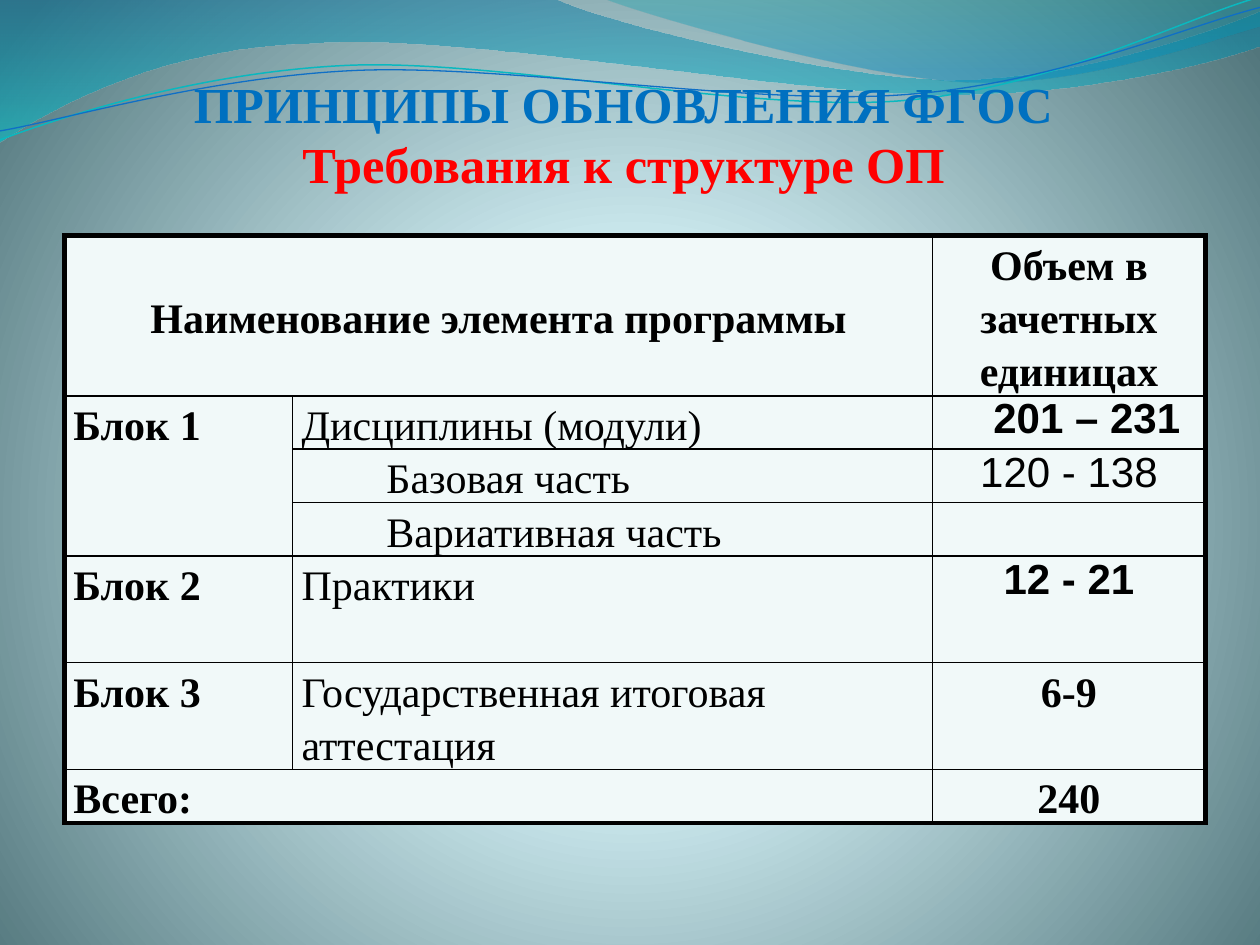
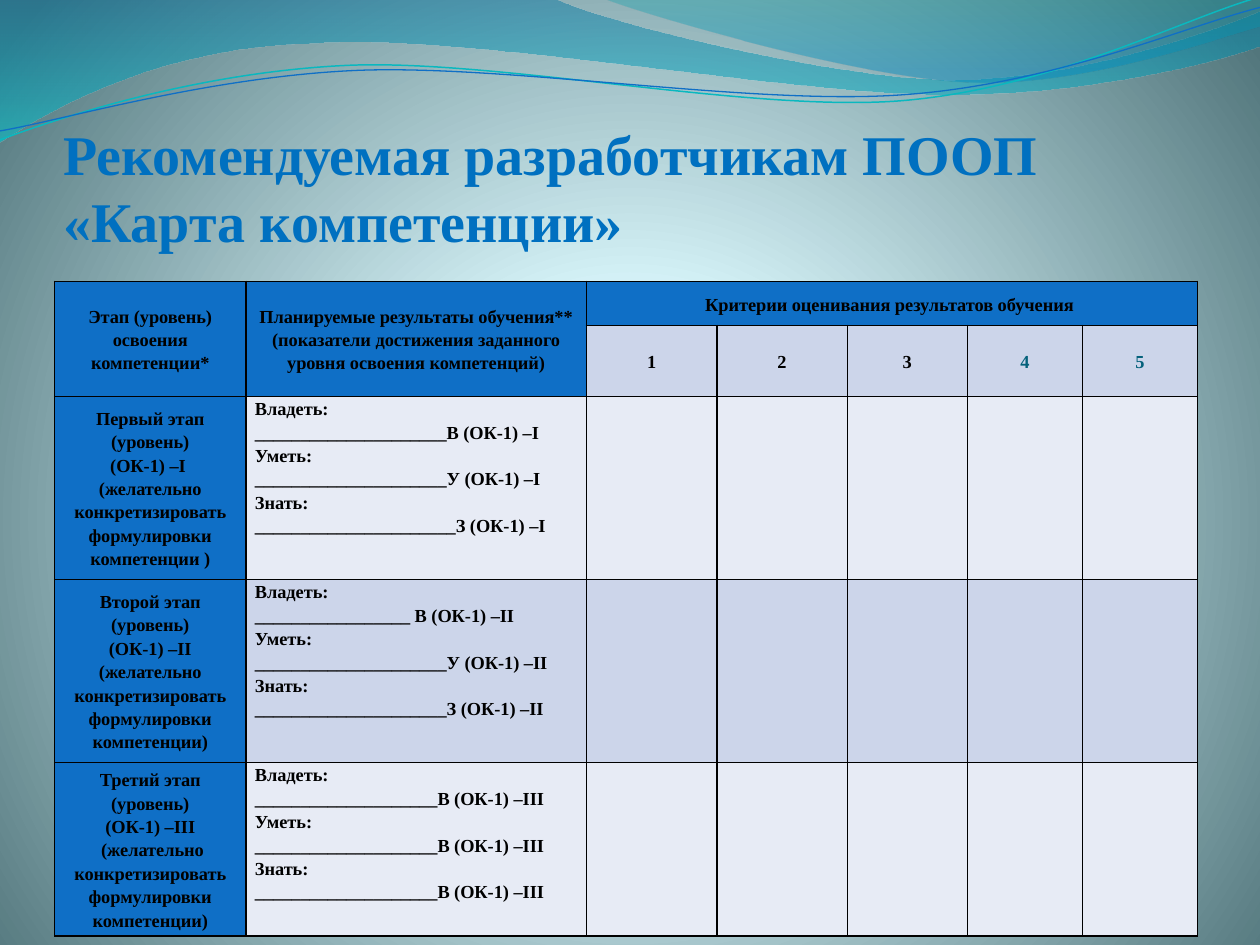
from lxml.etree import SubElement
from pptx import Presentation
from pptx.dml.color import RGBColor
from pptx.enum.text import MSO_ANCHOR, PP_ALIGN
from pptx.oxml import parse_xml
from pptx.oxml.ns import nsdecls, qn
from pptx.util import Cm, Pt

HUES = {
    "black": "000000", "title": "0070C0", "red": "FF0000", "mint": "F1F9F9",
    "blue": "0F6FC6", "teal": "0AB8BF", "ink": "04617B",
    "dark": "CCD5EA", "light": "E7EBF5",
}
SERIF, SANS = "Times New Roman", "Arial"
LEFT, MID = PP_ALIGN.LEFT, PP_ALIGN.CENTER
TOP, CORE = MSO_ANCHOR.TOP, MSO_ANCHOR.MIDDLE
PAD = 0.18

GLOW = [(0, "DBF5F9", 100), (25, "DDFAFF", 100), (100, "52767C", 100)]
RING = ('<a:path path="circle"><a:fillToRect l="10000" t="110000" '
        'r="10000" b="100000"/></a:path>')
DOWN = '<a:lin ang="5400000" scaled="1"/>'
TILT = 357.3

BANDS = [
    ([(0, "0074A1", 45), (100, "00C6CF", 55)],
     [[(0, 0)], [(11.18, -0.03)],
      [(12.09, 0.43), (16.87, 1.6), (19.25, 1.6)],
      [(21.67, 1.6), (24.33, 0.66), (25.4, 0.23)], [(25.43, 0.91)],
      [(24.97, 1.12), (22.1, 1.93), (18.95, 1.9)],
      [(15.8, 1.9), (9.7, 0.71), (6.53, 0.86)],
      [(3.28, 0.91), (1.17, 2.11), (-0.03, 2.87)], [(0, 0)]]),
    ([(0, "00A1A9", 30), (80, "008BBF", 45)],
     [[(12.17, -0.03)],
      [(12.93, 0.28), (17.32, 1.57), (19.53, 1.65)],
      [(21.74, 1.75), (24.41, 0.81), (25.4, 0.53)], [(25.4, 0)],
      [(12.17, -0.03)]]),
]
CURVES = [
    ("teal", 0.85,
     [[(-0.05, 2.22)], [(1.19, 1.82), (4.02, 1.04), (7.05, 1.05)],
      [(10.05, 1.07), (15.02, 2.37), (18.08, 2.29)],
      [(21.13, 2.2), (23.87, 0.91), (25.41, 0.55)]]),
    ("blue", 0.75,
     [[(-0.04, 2.04)], [(1.16, 1.9), (4.18, 1.15), (7.2, 1.16)],
      [(10.25, 1.18), (15.13, 2.25), (18.18, 2.17)],
      [(21.21, 2.1), (23.93, 1.06), (25.45, 0.75)]]),
]


def hue(name):
    return RGBColor.from_string(HUES[name])


def blend(host, stops, tail):
    marks = "".join(
        f'<a:gs pos="{at * 1000}"><a:srgbClr val="{tone}">'
        f'<a:alpha val="{alpha * 1000}"/></a:srgbClr></a:gs>'
        for at, tone, alpha in stops)
    grad = parse_xml(f'<a:gradFill {nsdecls("a")} rotWithShape="1">'
                     f'<a:gsLst>{marks}</a:gsLst>{tail}</a:gradFill>')
    host.replace(host.find(qn("a:solidFill")), grad)


class Deck:
    """Holds the shared style and the current slide."""

    def __init__(self):
        self.show = Presentation()
        self.show.slide_width, self.show.slide_height = Cm(25.4), Cm(19.05)
        self.slide = None

    def add(self):
        self.slide = self.show.slides.add_slide(self.show.slide_layouts[5])

    def curve(self, parts, close):
        spots = [(Cm(x), Cm(y)) for part in parts for x, y in part]
        pen = self.slide.shapes.build_freeform(*spots[0], scale=1.0)
        pen.add_line_segments(spots[1:], close=close)
        shape = pen.convert_to_shape()
        shape.shadow.inherit = False
        lines = iter(shape.element.xpath(".//a:lnTo"))
        for part in parts[1:]:
            first, *rest = [next(lines) for _ in part]
            if rest:
                first.tag = qn("a:cubicBezTo")
                for line in rest:
                    first.append(line[0])
                    line.getparent().remove(line)
        return shape

    def dress(self):
        master = self.show.slide_master
        master.background.fill.solid()
        blend(master.element.xpath("p:cSld/p:bg/p:bgPr")[0], GLOW, RING)
        waves = []
        for stops, parts in BANDS:
            shape = self.curve(parts, True)
            shape.line.fill.background()
            shape.fill.solid()
            blend(shape.element.spPr, stops, DOWN)
            waves.append(shape)
        for tone, width, parts in CURVES:
            shape = self.curve(parts, False)
            shape.rotation = TILT
            shape.fill.background()
            shape.line.color.rgb = hue(tone)
            shape.line.width = Pt(width)
            waves.append(shape)
        for i, wave in enumerate(waves):
            wave.element.nvSpPr.cNvPr.set("id", str(100 + i))
            master.shapes.element.insert(2 + i, wave.element)

    def font(self, run, size, tone, bold=True, face=SERIF):
        font = run.font
        font.name, font.size, font.bold = face, Pt(size), bold
        font.color.rgb = hue(tone)

    def title(self, text, top, tall, size, align, tones, base=0):
        head = self.slide.shapes.title
        head.left, head.top, head.width, head.height = map(Cm, (1.27, top, 22.86, tall))
        frame = head.text_frame
        frame.margin_left = frame.margin_right = 0
        frame.margin_top, frame.margin_bottom = Cm(0.13), Cm(base)
        frame.vertical_anchor = MSO_ANCHOR.BOTTOM
        frame.word_wrap = True
        frame.text = text
        para = frame.paragraphs[0]
        para.alignment = align
        for run, tone in zip(para.runs, tones):
            self.font(run, size, tone)

    def table(self, left, top, cols, rows, merges=()):
        grid = self.slide.shapes.add_table(
            len(rows), len(cols), Cm(left), Cm(top), Cm(sum(cols)), Cm(sum(rows))).table
        grid.first_row = grid.horz_banding = False
        for col, wide in zip(grid.columns, cols):
            col.width = Cm(wide)
        for row, tall in zip(grid.rows, rows):
            row.height = Cm(tall)
        for first, last in merges:
            grid.cell(*first).merge(grid.cell(*last))
        return grid

    def edges(self, grid, rim=1):
        high, wide = len(grid.rows), len(grid.columns)
        for r in range(high):
            for c in range(wide):
                cell = grid.cell(r, c)
                if cell.is_spanned:
                    continue
                outer = {"L": c == 0, "R": c + cell.span_width == wide,
                         "T": r == 0, "B": r + cell.span_height == high}
                props = cell._tc.get_or_add_tcPr()
                for side, thick in outer.items():
                    line = SubElement(props, qn(f"a:ln{side}"),
                                      w=str(Pt(rim if thick else 1)))
                    fill = SubElement(line, qn("a:solidFill"))
                    SubElement(fill, qn("a:srgbClr"), val=HUES["black"])

    def cell(self, cell, text, fill, size, tone="black", bold=True, face=SERIF,
             align=MID, anchor=TOP, space=1.15, left=PAD):
        cell.fill.solid()
        cell.fill.fore_color.rgb = hue(fill)
        cell.margin_left, cell.margin_right = Cm(left), Cm(PAD)
        cell.margin_top = cell.margin_bottom = 0
        cell.vertical_anchor = anchor
        cell.text_frame.text = text
        for para in cell.text_frame.paragraphs:
            para.alignment, para.line_spacing = align, space
            for run in para.runs:
                self.font(run, size, tone, bold, face)


def units(deck):
    deck.title("ПРИНЦИПЫ ОБНОВЛЕНИЯ ФГОС \vТребования к структуре ОП ",
               1.96, 3.18, 28.8, MID, ("title", "red"), base=1.23)
    line, pair = 1.07, 2.15
    grid = deck.table(1.3, 4.75, (4.6, 12.9, 5.5),
                      (3 * line, line, line, line, pair, pair, line),
                      (((0, 0), (0, 1)), ((1, 0), (3, 0)), ((6, 0), (6, 1))))
    deck.edges(grid, 3)
    head = {"anchor": CORE}
    block = {"align": LEFT}
    name = {"align": LEFT, "bold": False}
    part = {**name, "left": 1.89}
    sans = {"face": SANS, "space": 1.0}
    items = {
        (0, 0): ("Наименование элемента программы", head),
        (0, 2): ("Объем в зачетных единицах", head),
        (1, 0): ("Блок 1", block),
        (1, 1): ("Дисциплины (модули)", name),
        (1, 2): ("201 – 231", {**sans, "left": 0.9}),
        (2, 1): ("Базовая часть", part),
        (2, 2): ("120 - 138", {**sans, "bold": False}),
        (3, 1): ("Вариативная часть", part),
        (3, 2): ("", {}),
        (4, 0): ("Блок 2", block),
        (4, 1): ("Практики", name),
        (4, 2): ("12 - 21", sans),
        (5, 0): ("Блок 3", block),
        (5, 1): ("Государственная итоговая аттестация", name),
        (5, 2): ("6-9", {}),
        (6, 0): ("Всего:", block),
        (6, 2): ("240", {}),
    }
    for spot, (text, style) in items.items():
        deck.cell(grid.cell(*spot), text, "mint", 24, **style)


def levels(deck):
    deck.title("Рекомендуемая разработчикам ПООП «Карта компетенции»",
               0.74, 4.37, 32, LEFT, ("title",))
    grid = deck.table(1.1, 5.67, (3.86, 6.86, 2.63, 2.63, 2.42, 2.32, 2.32),
                      (0.89, 1.43, 3.69, 3.69, 3.5),
                      (((0, 0), (1, 0)), ((0, 1), (1, 1)), ((0, 2), (0, 6))))
    deck.edges(grid)
    items = {
        (0, 0): "Этап (уровень) освоения компетенции*",
        (0, 1): "Планируемые результаты обучения**\n"
                "(показатели достижения заданного уровня освоения компетенций)",
        (0, 2): "Критерии оценивания результатов обучения ",
    }
    items.update({(1, i + 1): str(i) for i in range(1, 6)})
    wish = "конкретизировать формулировки компетенции"
    stages = [
        ("Первый", "I", f" \n(желательно {wish} )",
         ("_" * 21 + "В", "_" * 21 + "У", "_" * 22 + "З")),
        ("Второй", "II", f"\n(желательно {wish})",
         ("_" * 17 + " В", "_" * 21 + "У", "_" * 21 + "З")),
        ("Третий", "III", f"\n (желательно\n{wish})", ("_" * 20 + "В",) * 3),
    ]
    for r, (rank, sign, note, blanks) in enumerate(stages, 2):
        code = f"(ОК-1) –{sign}"
        items[r, 0] = f"{rank} этап (уровень)\n{code}{note}"
        items[r, 1] = "\n".join(
            f"{verb}:\n{blank} {code}"
            for verb, blank in zip(("Владеть", "Уметь", "Знать"), blanks))
    for r in range(5):
        for c in range(7):
            cell = grid.cell(r, c)
            if cell.is_spanned:
                continue
            goal = r > 1 and c == 1
            fill = "blue" if r == 0 or c == 0 else ("light", "dark")[r % 2]
            deck.cell(cell, items.get((r, c), ""), fill, 10.5,
                      tone="ink" if r == 1 and c > 4 else "black",
                      align=LEFT if goal else MID, anchor=TOP if goal else CORE)


def main():
    deck = Deck()
    deck.add()
    deck.dress()
    units(deck)
    deck.add()
    levels(deck)
    deck.show.save("out.pptx")


if __name__ == "__main__":
    main()
